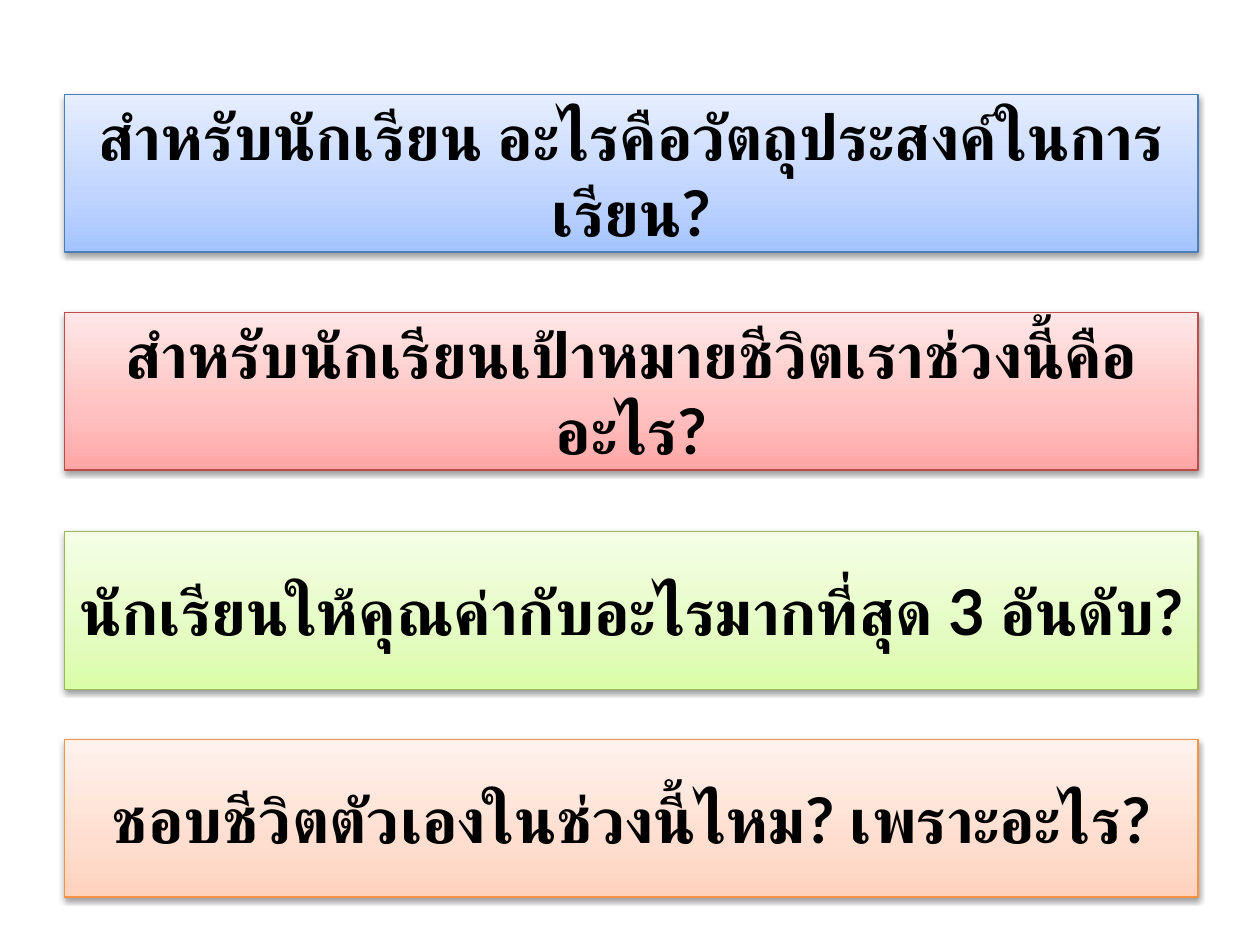
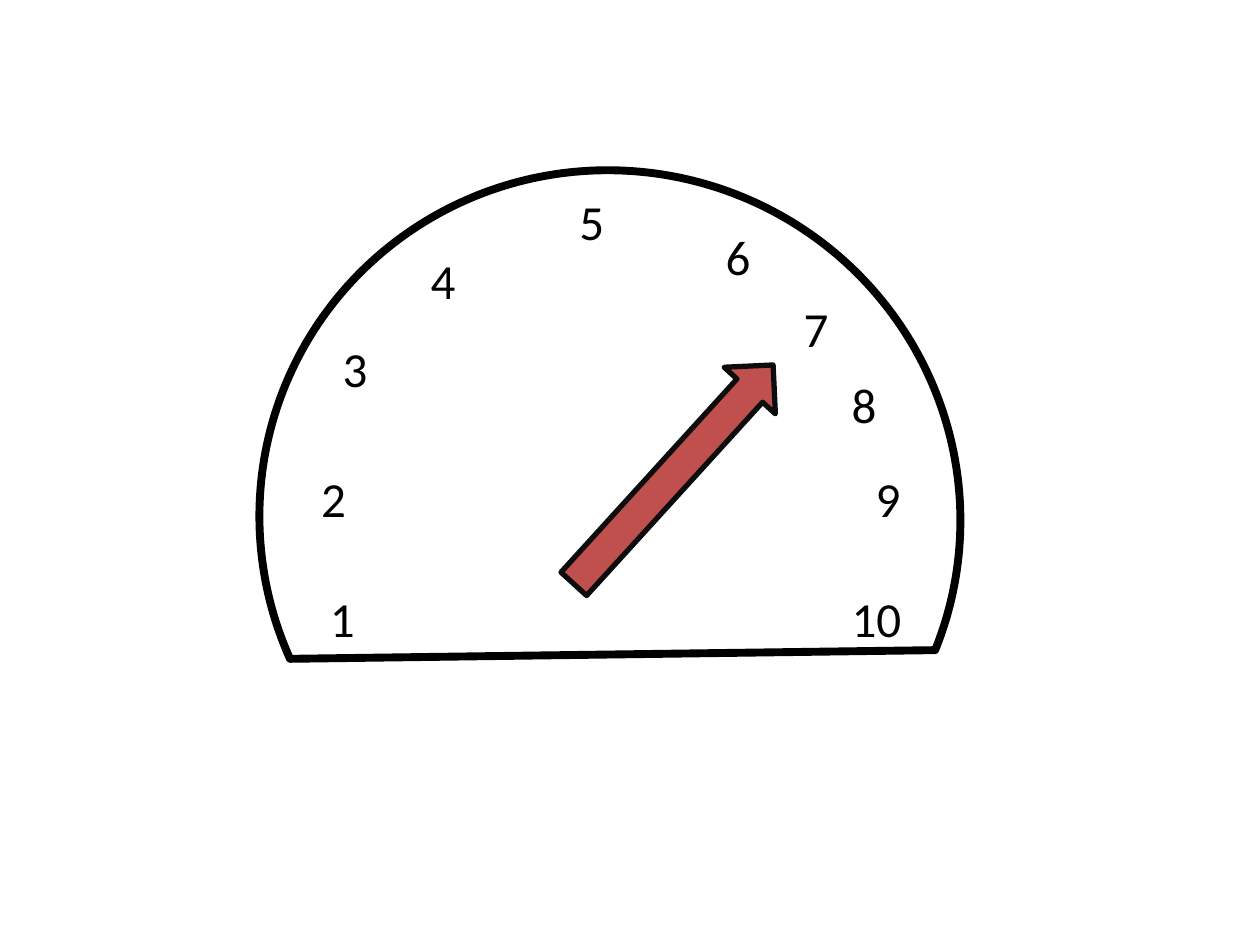
from dataclasses import dataclass

from lxml.etree import SubElement
from pptx import Presentation
from pptx.dml.color import RGBColor
from pptx.enum.lang import MSO_LANGUAGE_ID
from pptx.enum.shapes import MSO_SHAPE
from pptx.enum.text import MSO_ANCHOR, MSO_AUTO_SIZE, PP_ALIGN
from pptx.oxml.ns import qn
from pptx.util import Inches, Pt

COLUMNS, ROWS = 10, 7.5
SLIDE_WIDTH, SLIDE_HEIGHT = Inches(10), Inches(7.5)


@dataclass(frozen=True)
class Theme:
    ink: str = "000000"
    paper: str = "FFFFFF"
    needle: str = "C0504D"
    needle_edge: str = "0D0D0D"
    question_font: str = "Lato"
    number_font: str = "Calibri"
    question_size: int = 36
    number_size: int = 28
    blue: tuple = ("A4C4FF", "BFD4FF", "E6EEFF", "4B7EBC")
    red: tuple = ("FFA6A5", "FFC0BF", "FFE7E7", "BF4C48")
    green: tuple = ("DAFDA7", "E4FCC2", "F5FFE7", "98B955")
    orange: tuple = ("FFD2BD", "FFDED0", "FFF2ED", "F69240")


THEME = Theme()

QUESTIONS = (
    (0.75, THEME.blue, "สำหรับนักเรียน อะไรคือวัตถุประสงค์ในการเรียน?"),
    (2.48, THEME.red, "สำหรับนักเรียนเป้าหมายชีวิตเราช่วงนี้คืออะไร?"),
    (4.22, THEME.green, "นักเรียนให้คุณค่ากับอะไรมากที่สุด 3 อันดับ?"),
    (5.87, THEME.orange, "ชอบชีวิตตัวเองในช่วงนี้ไหม? เพราะอะไร?"),
)

SCORE_POSITIONS = (
    (2.52, 4.62), (2.45, 3.67), (2.62, 2.64), (3.32, 1.94), (4.5, 1.47),
    (5.66, 1.75), (6.28, 2.32), (6.66, 2.92), (6.85, 3.67), (6.66, 4.62),
)


def area(column, row, columns, rows):
    across, down = SLIDE_WIDTH / COLUMNS, SLIDE_HEIGHT / ROWS
    return (round(column * across), round(row * down),
            round(columns * across), round(rows * down))


def add_figure(slide, preset, place, fill, edge, edge_width, rotation=0):
    figure = slide.shapes.add_shape(preset, *area(*place))
    figure.shadow.inherit = False
    figure.fill.solid()
    figure.fill.fore_color.rgb = RGBColor.from_string(fill)
    figure.line.color.rgb = RGBColor.from_string(edge)
    figure.line.width = Pt(edge_width)
    figure.rotation = rotation
    return figure


def write(paragraph, text, font_name, size, bold=False):
    run = paragraph.add_run()
    run.text = text
    run.font.name = font_name
    run.font.size = Pt(size)
    run.font.bold = bold
    run.font.color.rgb = RGBColor.from_string(THEME.ink)
    return run


def shade_upwards(figure, colours):
    figure.fill.gradient()
    figure.fill.gradient_angle = 90
    stops = figure.element.spPr.find(qn("a:gradFill")).find(qn("a:gsLst"))
    for stop in list(stops):
        stops.remove(stop)
    for position, colour in zip((0, 35, 100), colours):
        stop = SubElement(stops, qn("a:gs"), pos=str(position * 1000))
        SubElement(stop, qn("a:srgbClr"), val=colour)


def cast_shadow(figure):
    effects = figure.element.spPr.find(qn("a:effectLst"))
    shadow = SubElement(effects, qn("a:outerShdw"), blurRad=str(Pt(3.1)),
                        dist=str(Pt(1.6)), dir="5400000", rotWithShape="0")
    colour = SubElement(shadow, qn("a:srgbClr"), val=THEME.ink)
    SubElement(colour, qn("a:alpha"), val="38000")


def add_question(slide, row, palette, question):
    *shades, edge = palette
    banner = add_figure(slide, MSO_SHAPE.RECTANGLE, (0.51, row, 9, 1.25),
                        shades[0], edge, 0.75)
    shade_upwards(banner, shades)
    cast_shadow(banner)
    frame = banner.text_frame
    frame.word_wrap = True
    frame.vertical_anchor = MSO_ANCHOR.MIDDLE
    paragraph = frame.paragraphs[0]
    paragraph.alignment = PP_ALIGN.CENTER
    run = write(paragraph, question, THEME.question_font, THEME.question_size, True)
    run.font.language_id = MSO_LANGUAGE_ID.THAI
    SubElement(run.font._element, qn("a:cs"), typeface=THEME.question_font)


def add_score(slide, score, column, row):
    label = slide.shapes.add_textbox(*area(column, row, 0.79, 0.57))
    frame = label.text_frame
    frame.word_wrap = True
    frame.auto_size = MSO_AUTO_SIZE.SHAPE_TO_FIT_TEXT
    write(frame.paragraphs[0], str(score), THEME.number_font, THEME.number_size)


def add_gauge(slide):
    dial = add_figure(slide, MSO_SHAPE.CHORD, (2.08, 1.33, 5.52, 5.57),
                      THEME.paper, THEME.ink, 4.5, 111.3)
    dial.adjustments[0] = 27
    dial.adjustments[1] = 162.45
    for score, (column, row) in enumerate(SCORE_POSITIONS, start=1):
        add_score(slide, score, column, row)
    add_figure(slide, MSO_SHAPE.DOWN_ARROW, (5.07, 2.59, 0.55, 2.35),
               THEME.needle, THEME.needle_edge, 3, 222.3)


def main():
    deck = Presentation()
    deck.slide_width, deck.slide_height = SLIDE_WIDTH, SLIDE_HEIGHT
    blank = deck.slide_layouts[6]
    reflection = deck.slides.add_slide(blank)
    for row, palette, question in QUESTIONS:
        add_question(reflection, row, palette, question)
    add_gauge(deck.slides.add_slide(blank))
    deck.save("out.pptx")


if __name__ == "__main__":
    main()
